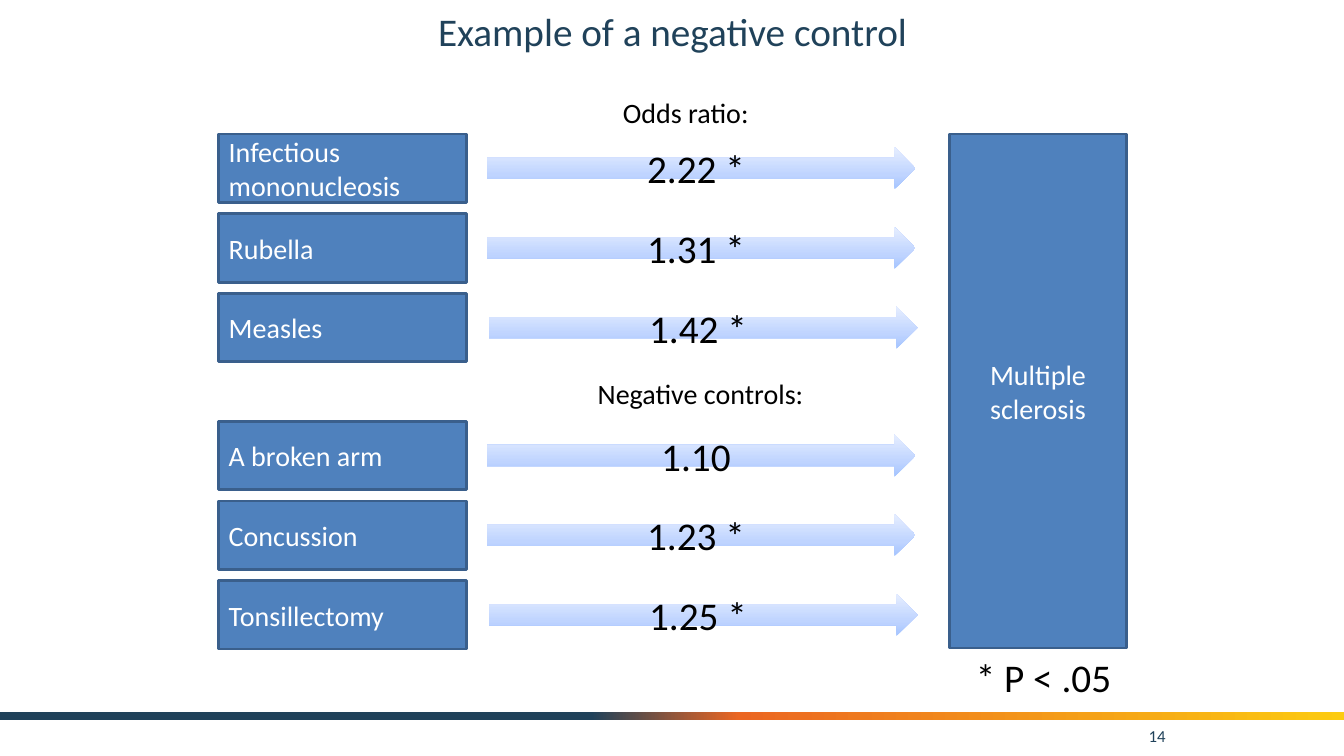
import pptx
import pptx.dml.color
import pptx.enum.shapes
import pptx.enum.text
import pptx.oxml
import pptx.oxml.ns
import pptx.util
from pptx.util import Inches

# Content
TITLE = "Example of a negative control"
OUTCOME = "Multiple sclerosis"
FOOTNOTE = "* P < .05"
PAGE_NUMBER = "14"
GROUPS = [
    {"top": 1.33, "heading": "Odds ratio:", "heading_box": (6.08, 0.9, 1.46, 0.44),
     "rows": [("Infectious\nmononucleosis", "2.22 *"), ("Rubella", "1.31 *"), ("Measles", "1.42 *")]},
    {"top": 4.18, "heading": "Negative controls:", "heading_box": (5.83, 3.69, 2.26, 0.44),
     "rows": [("A broken arm", "1.10"), ("Concussion", "1.23 *"), ("Tonsillectomy", "1.25 *")]},
]

# Style and layout
COLORS = {"navy": "20425A", "box": "4F81BD", "border": "3A5F8C", "white": "FFFFFF", "black": "000000"}
BAND_STOPS = [(44, "20425A"), (55, "EB6622"), (100, "FCCB10")]
ARROW_STOPS = [(0, "A4C4FF"), (35, "BFD4FF"), (100, "E6EEFF")]
FONT = "Calibri"
BOX_LEFT, BOX_WIDTH, BOX_HEIGHT, ROW_PITCH = 2.17, 2.46, 0.68, 0.79
ARROW_LEFTS, ARROW_WIDTH, ARROW_HEIGHT = (4.83, 4.83, 4.85), 4.25, 0.42
OUTCOME_BOX = (9.42, 1.33, 1.75, 5.1)

SHAPE = pptx.enum.shapes.MSO_SHAPE
ALIGN = pptx.enum.text.PP_ALIGN
ANCHOR = pptx.enum.text.MSO_ANCHOR

presentation = pptx.Presentation()
presentation.slide_width = Inches(13.33)
presentation.slide_height = Inches(7.5)
slide = presentation.slides.add_slide(presentation.slide_layouts[6])


def rgb(name):
    return pptx.dml.color.RGBColor.from_string(COLORS[name])


def write(shape, text, size, color, align=ALIGN.LEFT, anchor=ANCHOR.MIDDLE, wrap=True):
    frame = shape.text_frame
    frame.text = text
    frame.word_wrap = wrap
    frame.vertical_anchor = anchor
    for paragraph in frame.paragraphs:
        paragraph.alignment = align
        for run in paragraph.runs:
            run.font.name = FONT
            run.font.size = pptx.util.Pt(size)
            run.font.color.rgb = rgb(color)


def add_shape(kind, box):
    shape = slide.shapes.add_shape(kind, *map(Inches, box))
    shape.shadow.inherit = False
    shape.line.fill.background()
    return shape


def add_box(box, text, align):
    shape = add_shape(SHAPE.RECTANGLE, box)
    shape.fill.solid()
    shape.fill.fore_color.rgb = rgb("box")
    shape.line.color.rgb = rgb("border")
    shape.line.width = pptx.util.Pt(2)
    write(shape, text, 20, "white", align)


def add_gradient_shape(kind, box, stops, angle):
    shape = add_shape(kind, box)
    stop_xml = "".join(f'<a:gs pos="{position * 1000}"><a:srgbClr val="{color}"/></a:gs>'
                       for position, color in stops)
    gradient = pptx.oxml.parse_xml(
        f'<a:gradFill {pptx.oxml.ns.nsdecls("a")} rotWithShape="1"><a:gsLst>{stop_xml}</a:gsLst>'
        f'<a:lin ang="{angle * 60000}" scaled="0"/></a:gradFill>')
    shape._element.spPr.find(pptx.oxml.ns.qn("a:prstGeom")).addnext(gradient)
    return shape


def add_text(box, text, size, color, **options):
    write(slide.shapes.add_textbox(*map(Inches, box)), text, size, color, **options)


# Footer band, title and page number
add_gradient_shape(SHAPE.RECTANGLE, (0, 7.06, 13.33, 0.08), BAND_STOPS, 0)
add_text((2.17, 0, 9, 0.61), TITLE, 28, "navy", align=ALIGN.CENTER)
add_text((9.33, 7.1, 2.33, 0.4), PAGE_NUMBER, 12, "navy", align=ALIGN.RIGHT)

# Outcome and its footnote
add_box(OUTCOME_BOX, OUTCOME, ALIGN.CENTER)
add_text((9.58, 6.43, 1.57, 0.57), FOOTNOTE, 28, "black", anchor=ANCHOR.TOP, wrap=False)

# Exposures with an arrow carrying each odds ratio
for group in GROUPS:
    add_text(group["heading_box"], group["heading"], 20, "black", anchor=ANCHOR.TOP, wrap=False)
    for index, (exposure, odds_ratio) in enumerate(group["rows"]):
        top = group["top"] + index * ROW_PITCH
        add_box((BOX_LEFT, top, BOX_WIDTH, BOX_HEIGHT), exposure, ALIGN.LEFT)
        arrow_top = top + (BOX_HEIGHT - ARROW_HEIGHT) / 2
        arrow = add_gradient_shape(SHAPE.RIGHT_ARROW,
                                   (ARROW_LEFTS[index], arrow_top, ARROW_WIDTH, ARROW_HEIGHT),
                                   ARROW_STOPS, 270)
        write(arrow, odds_ratio, 28, "black", ALIGN.CENTER)

presentation.save("out.pptx")
